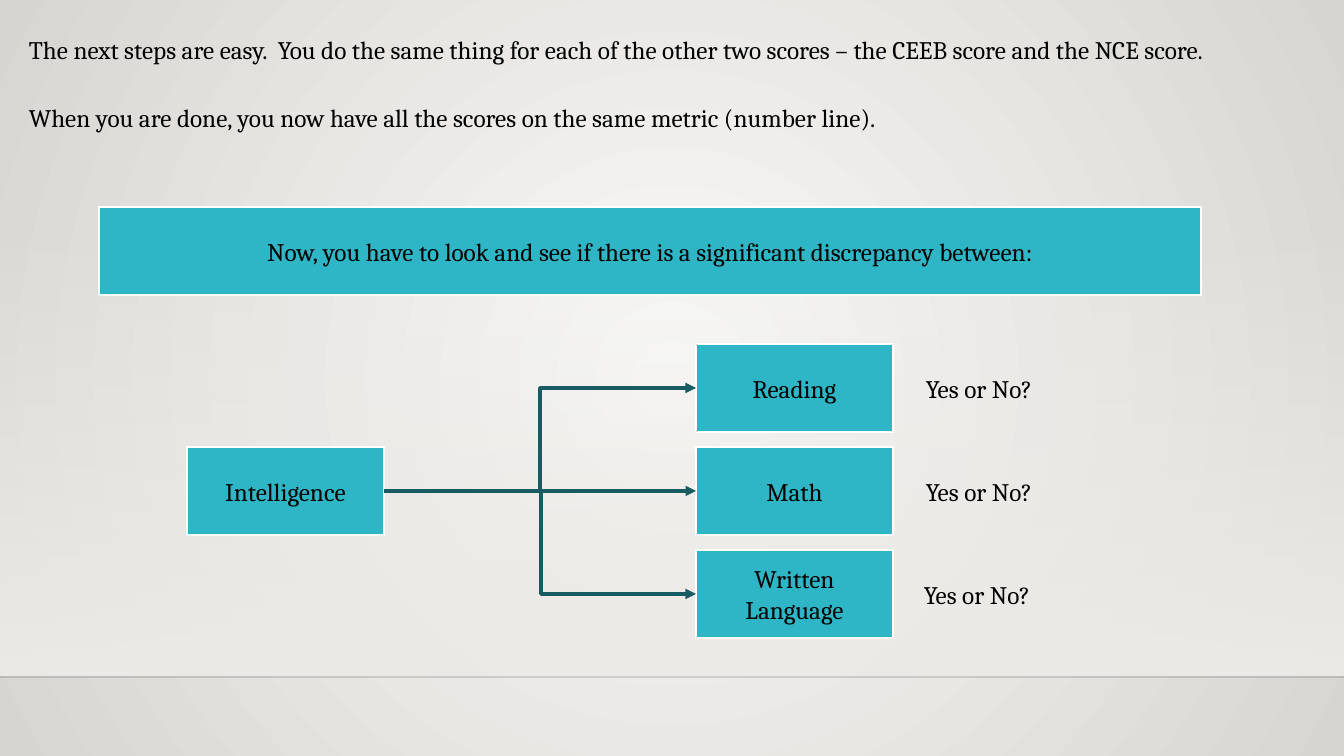
import pptx
import pptx.util
import pptx.oxml
import pptx.oxml.ns
from pptx.dml.color import RGBColor
from pptx.enum.shapes import MSO_CONNECTOR, MSO_SHAPE
from pptx.enum.text import MSO_ANCHOR, MSO_AUTO_SIZE, PP_ALIGN

PX = 12192000 / 1344
NS = pptx.oxml.ns.nsdecls("a")
qn = pptx.oxml.ns.qn
BLACK = RGBColor(0x00, 0x00, 0x00)
WHITE = RGBColor(0xFF, 0xFF, 0xFF)
TEAL = RGBColor(0x2F, 0xB6, 0xC6)
DARK_TEAL = RGBColor(0x18, 0x5B, 0x63)
CENTER_GRAY = RGBColor(0xFA, 0xFA, 0xF9)
EDGE_GRAY = RGBColor(0xD7, 0xD5, 0xD2)
WALL = RGBColor(0xED, 0xEB, 0xE7)
FLOOR_LINE = RGBColor(0x00, 0x00, 0x01)


def add_text(text, x, y, w, h, box=False):
    pos = [round(v * PX) for v in (x, y, w, h)]
    if box:
        sp = s.shapes.add_shape(MSO_SHAPE.RECTANGLE, *pos)
        sp.shadow.inherit = False
        sp.fill.solid()
        sp.fill.fore_color.rgb = TEAL
        sp.line.color.rgb = WHITE
        sp.line.width = pptx.util.Pt(1.75)
    else:
        sp = s.shapes.add_textbox(*pos)
    tf = sp.text_frame
    tf.word_wrap = box
    tf.auto_size = MSO_AUTO_SIZE.NONE if box else MSO_AUTO_SIZE.SHAPE_TO_FIT_TEXT
    tf.vertical_anchor = MSO_ANCHOR.MIDDLE if box else MSO_ANCHOR.TOP
    p = tf.paragraphs[0]
    p.alignment = PP_ALIGN.CENTER if box else PP_ALIGN.LEFT
    r = p.add_run()
    r.text = text
    r.font.name = "Cambria"
    r.font.size = pptx.util.Pt(18)
    r.font.color.rgb = BLACK
    return sp


def add_line(kind, x1, y1, x2, y2, color, width):
    cn = s.shapes.add_connector(kind, *[round(v * PX) for v in (x1, y1, x2, y2)])
    cn.line.color.rgb = color
    cn.line.width = pptx.util.Pt(width)
    cn.element.spPr.append(pptx.oxml.parse_xml(f"<a:effectLst {NS}/>"))
    return cn


prs = pptx.Presentation()
prs.slide_width = round(1344 * PX)
prs.slide_height = round(756 * PX)
s = prs.slides.add_slide(prs.slide_layouts[6])

# Radial background
fill = s.background.fill
fill.gradient()
for stop, color in zip(fill.gradient_stops, (CENTER_GRAY, EDGE_GRAY)):
    stop.color.rgb = color
grad = s.element.find(".//" + qn("a:gradFill"))
grad.replace(grad.find(qn("a:lin")), pptx.oxml.parse_xml(
    f'<a:path {NS} path="circle"><a:fillToRect l="50000" t="50000" r="50000" b="50000"/></a:path>'))

# Wall fading in towards the floor line
wall = s.shapes.add_shape(MSO_SHAPE.RECTANGLE, 0, round(222 * PX), prs.slide_width, round(454 * PX))
wall.shadow.inherit = False
wall.line.fill.background()
wall.fill.gradient()
wall.fill.gradient_angle = 270
for stop in wall.fill.gradient_stops:
    stop.color.rgb = WALL
wall.element.find(".//" + qn("a:srgbClr")).append(pptx.oxml.parse_xml(f'<a:alpha {NS} val="0"/>'))
floor = add_line(MSO_CONNECTOR.STRAIGHT, 0, 677, 1344, 677, FLOOR_LINE, 1)
floor.element.find(".//" + qn("a:srgbClr")).append(pptx.oxml.parse_xml(f'<a:alpha {NS} val="20000"/>'))

# Introduction
add_text("The next steps are easy.  You do the same thing for each of the other two scores "
         "– the CEEB score and the NCE score.", 19, 29, 1318, 40)
add_text("When you are done, you now have all the scores on the same metric (number line).",
         19, 97, 951, 40)

# Boxes
add_text("Now, you have to look and see if there is a significant discrepancy between:",
         99, 207, 1102, 88, box=True)
intelligence = add_text("Intelligence", 187, 447, 197, 88, box=True)
subjects = [add_text(name, 696, 344 + 103 * i, 197, 88, box=True)
            for i, name in enumerate(("Reading", "Math", "Written Language"))]

# Arrows to the three subjects
arrows = [(0, MSO_CONNECTOR.ELBOW, 384), (2, MSO_CONNECTOR.ELBOW, 407), (1, MSO_CONNECTOR.STRAIGHT, 511)]
for row, kind, x in arrows:
    cn = add_line(kind, x, 491, 696, 388 + 103 * row, DARK_TEAL, 2.5)
    cn.end_connect(subjects[row], 1)
    cn.line._get_or_add_ln().append(pptx.oxml.parse_xml(f'<a:tailEnd {NS} type="triangle"/>'))
    if row == 0:
        cn.begin_connect(intelligence, 3)
    if row == 2:
        cn.element.find(".//" + qn("a:avLst")).append(
            pptx.oxml.parse_xml(f'<a:gd {NS} name="adj1" fmla="val 46400"/>'))

# Answers
for i, x in enumerate((916, 916, 914)):
    add_text("Yes or No?", x, 368 + 103 * i, 141, 40)

prs.save("out.pptx")
